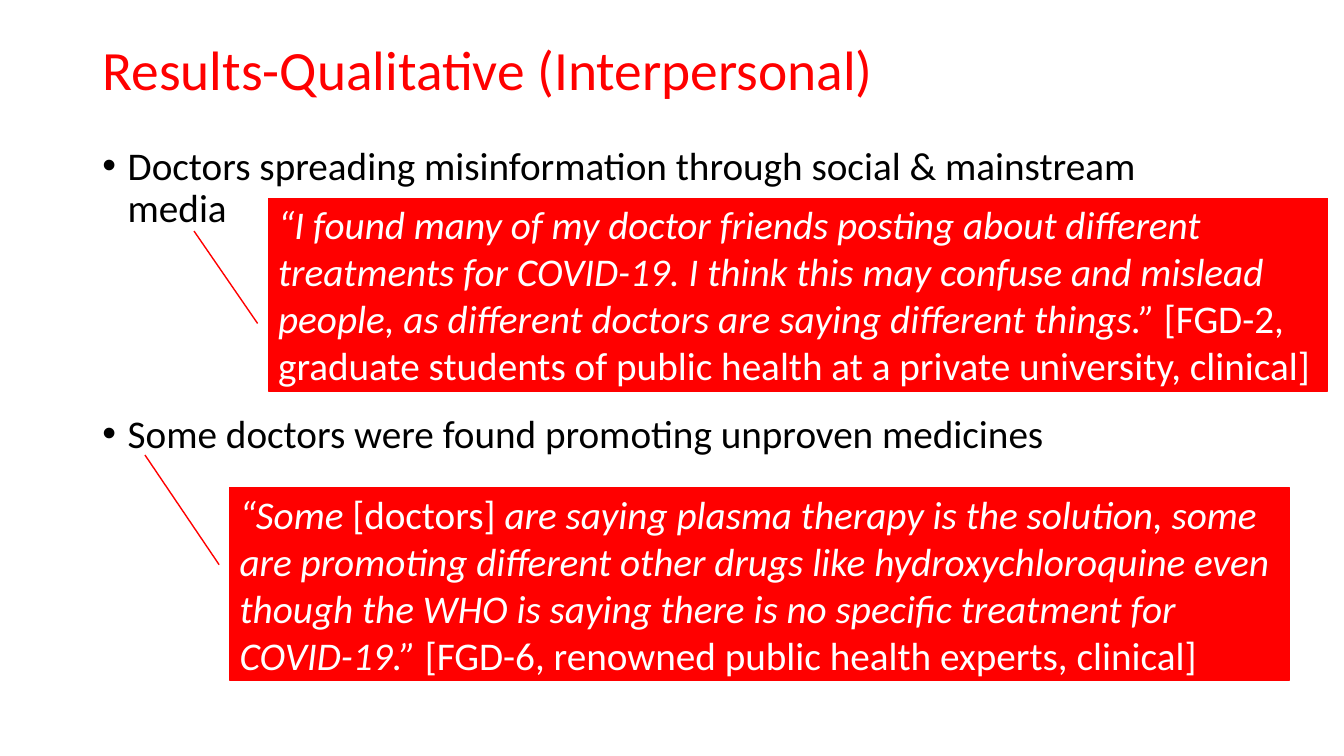
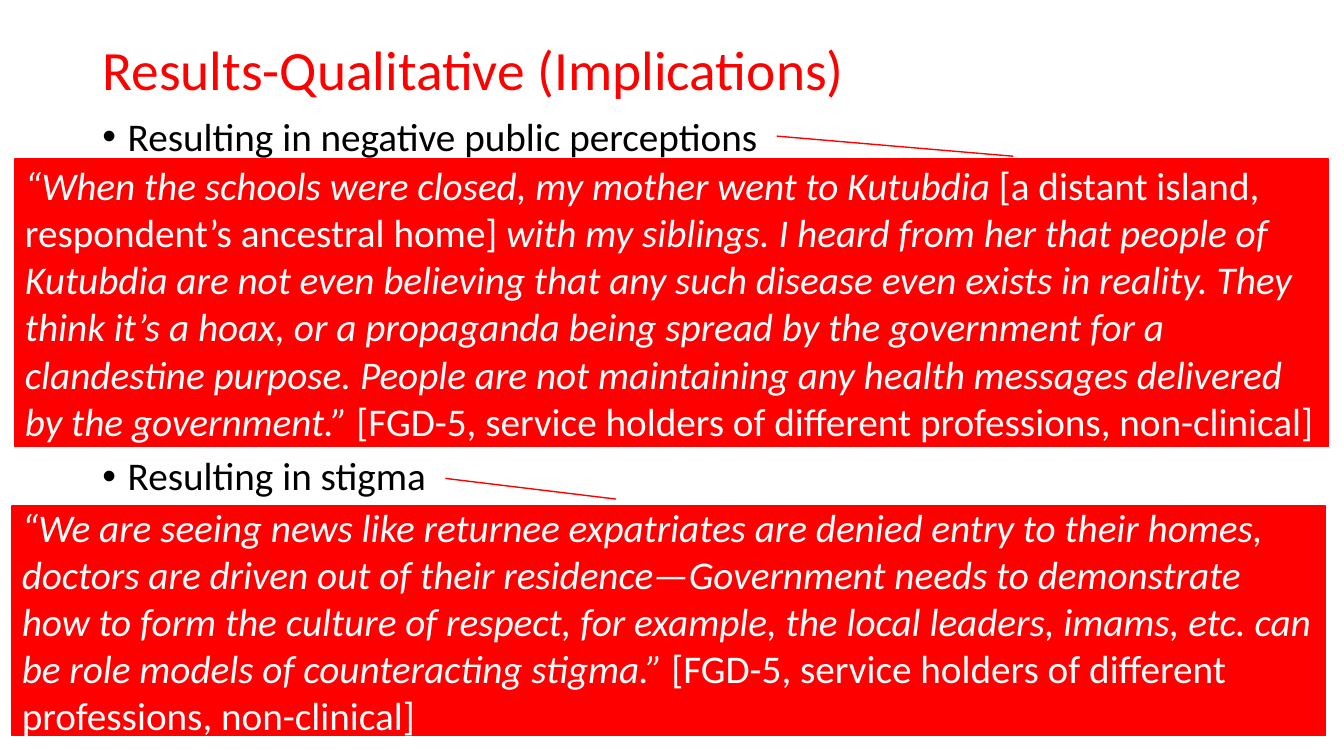
import pptx
import pptx.util
import pptx.dml.color
import pptx.enum.shapes
import pptx.enum.text
from lxml import etree
from pptx.util import Cm

RED = pptx.dml.color.RGBColor(0xFF, 0x00, 0x00)
WHITE = pptx.dml.color.RGBColor(0xFF, 0xFF, 0xFF)
BLACK = pptx.dml.color.RGBColor(0x00, 0x00, 0x00)
FONT = "Calibri"
TITLE_SIZE, TEXT_SIZE = 39.6, 28

LEFT, WIDTH = 2.33, 29.21
TITLE_TOP, TITLE_HEIGHT = 1.02, 1.6
BODY_BOTTOM = 17.17
BULLET_INDENT = 0.64

# Quotes alternate between italic speech and upright remarks.
# Boxes are left, top, width, height in cm; pointers are start y, start x,
# end y, end x as shares of the box.
SLIDES = [
    {
        "title": "Results-Qualitative (Interpersonal)",
        "body_top": 3.56,
        "bullet_gap": 131,
        "bullets": [
            "Doctors spreading misinformation through social & mainstream media",
            "Some doctors were found promoting unproven medicines",
        ],
        "callouts": [
            {
                "box": (6.76, 5.0, 26.7, 4.85),
                "pointer": (0.65, -0.01, 0.17, -0.07),
                "quote": [
                    "“I found many of my doctor friends posting about different treatments "
                    "for COVID-19. I think this may confuse and mislead people, as different "
                    "doctors are saying different things.”",
                    " [FGD-2, graduate students of public health at a private university, "
                    "clinical]",
                ],
            },
            {
                "box": (5.79, 12.29, 26.7, 4.85),
                "pointer": (0.4, -0.01, -0.17, -0.08),
                "quote": [
                    "“Some",
                    " [doctors] ",
                    "are saying plasma therapy is the solution, some are promoting different "
                    "other drugs like hydroxychloroquine even though the WHO is saying there "
                    "is no specific treatment for COVID-19.”",
                    " [FGD-6, renowned public health experts, clinical]",
                ],
            },
        ],
    },
    {
        "title": "Results-Qualitative (Implications)",
        "body_top": 2.84,
        "bullet_gap": 212,
        "bullets": ["Resulting in negative public perceptions", "Resulting in stigma"],
        "callouts": [
            {
                "box": (0.38, 4.01, 33.1, 7.24),
                "pointer": (-0.01, 0.76, -0.08, 0.58),
                "quote": [
                    "“When the schools were closed, my mother went to Kutubdia ",
                    "[a distant island, respondent’s ancestral home]",
                    " with my siblings. I heard from her that people of Kutubdia are not even "
                    "believing that any such disease even exists in reality. They think it’s "
                    "a hoax, or a propaganda being spread by the government for a clandestine "
                    "purpose. People are not maintaining any health messages delivered by the "
                    "government.”",
                    " [FGD-5, service holders of different professions, non-clinical]",
                ],
            },
            {
                "box": (0.3, 12.75, 33.1, 5.79),
                "pointer": (-0.03, 0.46, -0.12, 0.33),
                "quote": [
                    "“We are seeing news like returnee expatriates are denied entry to their "
                    "homes, doctors are driven out of their residence—Government needs to "
                    "demonstrate how to form the culture of respect, for example, the local "
                    "leaders, imams, etc. can be role models of counteracting stigma.”",
                    " [FGD-5, service holders of different professions, non-clinical]",
                ],
            },
        ],
    },
]


def write(paragraph, text, size=TEXT_SIZE, color=BLACK, italic=False, line_spacing=None):
    """Append a formatted run to a left-aligned paragraph."""
    paragraph.alignment = pptx.enum.text.PP_ALIGN.LEFT
    if line_spacing:
        paragraph.line_spacing = line_spacing
    run = paragraph.add_run()
    run.text = text
    run.font.name = FONT
    run.font.size = pptx.util.Pt(size)
    run.font.color.rgb = color
    run.font.italic = italic


def set_frame(shape, anchor):
    frame = shape.text_frame
    frame.word_wrap = True
    frame.auto_size = pptx.enum.text.MSO_AUTO_SIZE.NONE
    frame.vertical_anchor = anchor
    return frame


def add_bullet_mark(paragraph):
    properties = paragraph._p.get_or_add_pPr()
    properties.set("marL", str(Cm(BULLET_INDENT)))
    properties.set("indent", str(-Cm(BULLET_INDENT)))
    namespace = pptx.oxml.ns.qn
    etree.SubElement(properties, namespace("a:buFont"), typeface="Arial")
    etree.SubElement(properties, namespace("a:buChar"), char="•")


def set_title(slide, text):
    title = slide.shapes.title
    title.left, title.top = Cm(LEFT), Cm(TITLE_TOP)
    title.width, title.height = Cm(WIDTH), Cm(TITLE_HEIGHT)
    frame = set_frame(title, pptx.enum.text.MSO_ANCHOR.MIDDLE)
    write(frame.paragraphs[0], text, size=TITLE_SIZE, color=RED, line_spacing=0.9)


def add_bullets(slide, bullets, top, gap):
    box = slide.shapes.add_textbox(Cm(LEFT), Cm(top), Cm(WIDTH), Cm(BODY_BOTTOM - top))
    frame = set_frame(box, pptx.enum.text.MSO_ANCHOR.TOP)
    for index, text in enumerate(bullets):
        paragraph = frame.add_paragraph() if index else frame.paragraphs[0]
        write(paragraph, text, line_spacing=0.9)
        if index:
            paragraph.space_before = pptx.util.Pt(gap)
        add_bullet_mark(paragraph)


def add_callout(slide, box, pointer, quote):
    callout = slide.shapes.add_shape(
        pptx.enum.shapes.MSO_SHAPE.LINE_CALLOUT_1, *map(Cm, box))
    for index, share in enumerate(pointer):
        callout.adjustments[index] = share
    callout.shadow.inherit = False
    callout.fill.solid()
    callout.fill.fore_color.rgb = RED
    callout.line.color.rgb = RED
    callout.line.width = pptx.util.Pt(1)
    frame = set_frame(callout, pptx.enum.text.MSO_ANCHOR.MIDDLE)
    for index, text in enumerate(quote):
        write(frame.paragraphs[0], text, color=WHITE, italic=index % 2 == 0)


def main():
    presentation = pptx.Presentation()
    presentation.slide_width, presentation.slide_height = Cm(33.87), Cm(19.05)
    title_only = presentation.slide_layouts.get_by_name("Title Only")
    for content in SLIDES:
        slide = presentation.slides.add_slide(title_only)
        set_title(slide, content["title"])
        add_bullets(slide, content["bullets"], content["body_top"], content["bullet_gap"])
        for callout in content["callouts"]:
            add_callout(slide, **callout)
    presentation.save("out.pptx")


if __name__ == "__main__":
    main()
